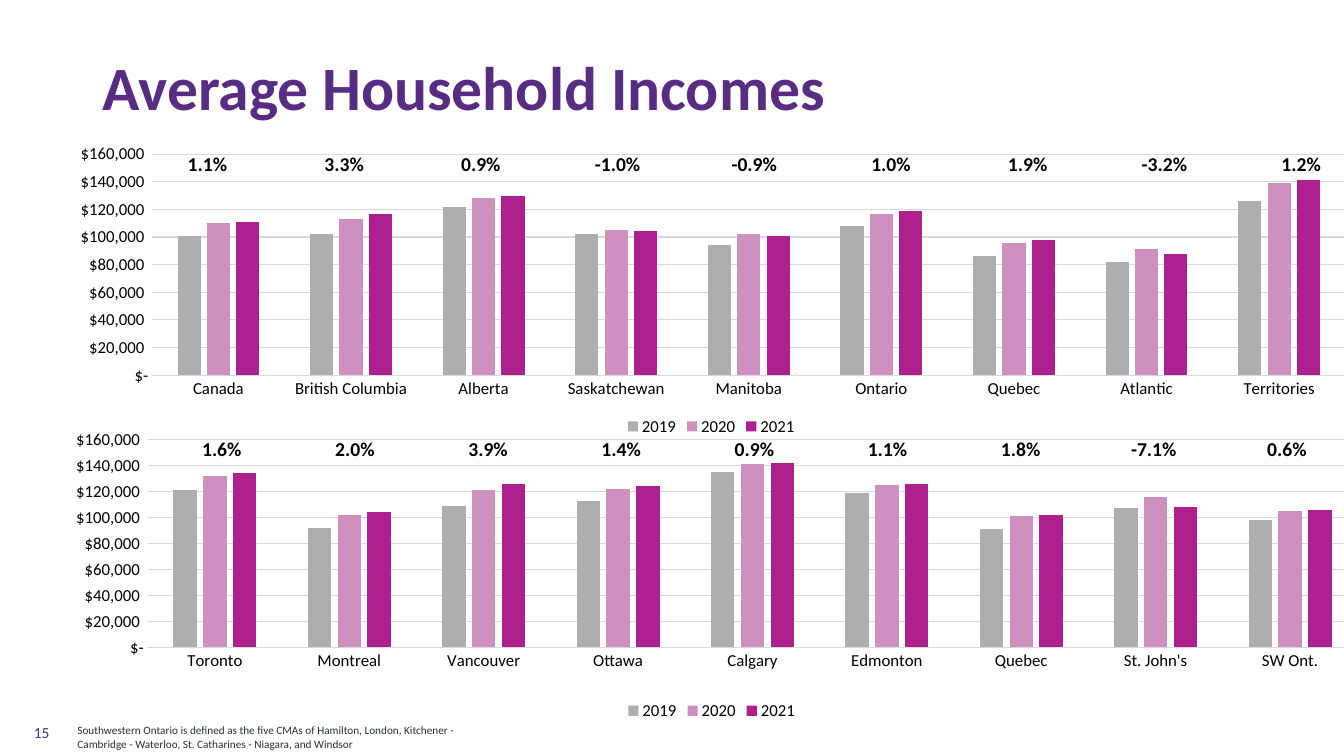
from dataclasses import dataclass

from lxml.etree import SubElement
from pptx import Presentation
from pptx.chart.data import CategoryChartData
from pptx.dml.color import RGBColor
from pptx.enum.chart import XL_CHART_TYPE as ChartType
from pptx.enum.chart import XL_LEGEND_POSITION as LegendPosition
from pptx.enum.chart import XL_TICK_MARK as TickMark
from pptx.enum.text import MSO_ANCHOR as Anchor
from pptx.enum.text import PP_ALIGN as Align
from pptx.oxml.ns import qn
from pptx.slide import Slide
from pptx.util import Pt

PURPLE = RGBColor(0x58, 0x2C, 0x83)
SLATE = RGBColor(0x28, 0x2F, 0x39)
BLACK = RGBColor(0x00, 0x00, 0x00)
GRID_GREY = RGBColor(0xD9, 0xD9, 0xD9)
YEAR_COLORS = {
    "2019": RGBColor(0xAC, 0xAE, 0xB0),
    "2020": RGBColor(0xCD, 0x90, 0xBF),
    "2021": RGBColor(0xAD, 0x20, 0x8E),
}
FONT = "Calibri"
DOLLAR_FORMAT = r'_-"$"* #,##0_-;\-"$"* #,##0_-;_-"$"* "-"'
PLAIN_TABLE_STYLE = "{2D5ABB26-0587-4C30-8999-92F81FD0307C}"


@dataclass(frozen=True)
class Box:
    left: float
    top: float
    width: float
    height: float

    def lengths(self) -> tuple[Pt, Pt, Pt, Pt]:
        return Pt(self.left), Pt(self.top), Pt(self.width), Pt(self.height)


@dataclass(frozen=True)
class Label:
    text: str
    box: Box
    size: float
    color: RGBColor
    bold: bool = False
    align: Align = Align.LEFT
    anchor: Anchor = Anchor.TOP
    line_spacing: float = 1.0


@dataclass(frozen=True)
class Place:
    name: str
    thousands: tuple[int, int, int]
    change: str


@dataclass(frozen=True)
class IncomePanel:
    chart_box: Box
    table_box: Box
    places: tuple[Place, ...]
    plot: Box | None = None


CITIES = IncomePanel(
    Box(36.72, 301.68, 943.2, 216),
    Box(110.88, 308.88, 856.08, 29.52),
    (
        Place("Toronto", (121, 132, 134), "1.6%"),
        Place("Montreal", (92, 102, 104), "2.0%"),
        Place("Vancouver", (109, 121, 126), "3.9%"),
        Place("Ottawa", (113, 122, 124), "1.4%"),
        Place("Calgary", (135, 141, 142), "0.9%"),
        Place("Edmonton", (119, 125, 126), "1.1%"),
        Place("Quebec", (91, 101, 102), "1.8%"),
        Place("St. John's", (107, 116, 108), "-7.1%"),
        Place("SW Ont.", (98, 105, 106), "0.6%"),
    ),
    Box(0.073, 0.057, 0.916, 0.687),
)
REGIONS = IncomePanel(
    Box(36, 98.64, 943.92, 216),
    Box(99.36, 105.84, 879.12, 29.52),
    (
        Place("Canada", (101, 110, 111), "1.1%"),
        Place("British Columbia", (102, 113, 117), "3.3%"),
        Place("Alberta", (122, 128, 130), "0.9%"),
        Place("Saskatchewan", (102, 105, 104), "-1.0%"),
        Place("Manitoba", (94, 102, 101), "-0.9%"),
        Place("Ontario", (108, 117, 119), "1.0%"),
        Place("Quebec", (86, 96, 98), "1.9%"),
        Place("Atlantic", (82, 91, 88), "-3.2%"),
        Place("Territories", (126, 139, 141), "1.2%"),
    ),
)
LABELS = (
    Label("Average Household Incomes", Box(66.24, 30.96, 863.28, 66.96), 44, PURPLE,
          bold=True, anchor=Anchor.MIDDLE, line_spacing=0.9),
    Label("Southwestern Ontario is defined as the five CMAs of Hamilton, London, Kitchener - "
          "Cambridge - Waterloo, St. Catharines - Niagara, and Windsor",
          Box(48.24, 513.36, 313.92, 26.64), 8, SLATE),
    Label("15", Box(0, 509.04, 42.48, 28.8), 11, PURPLE,
          align=Align.RIGHT, anchor=Anchor.MIDDLE),
)


def style_font(font, size: float, color: RGBColor, bold: bool = False) -> None:
    font.name = FONT
    font.size = Pt(size)
    font.bold = bold
    font.color.rgb = color


def place_plot(chart, plot: Box) -> None:
    plot_area = chart.element.find(f".//{qn('c:plotArea')}")
    for old_layout in plot_area.findall(qn("c:layout")):
        plot_area.remove(old_layout)
    layout = SubElement(plot_area, qn("c:layout"))
    plot_area.insert(0, layout)
    manual = SubElement(layout, qn("c:manualLayout"))
    settings = {
        "layoutTarget": "inner", "xMode": "edge", "yMode": "edge",
        "x": plot.left, "y": plot.top, "w": plot.width, "h": plot.height,
    }
    for tag, value in settings.items():
        SubElement(manual, qn(f"c:{tag}")).set("val", str(value))


def add_income_chart(slide: Slide, panel: IncomePanel) -> None:
    data = CategoryChartData(number_format=DOLLAR_FORMAT)
    data.categories = [place.name for place in panel.places]
    for index, year in enumerate(YEAR_COLORS):
        data.add_series(year, [place.thousands[index] * 1000 for place in panel.places])
    chart = slide.shapes.add_chart(
        ChartType.COLUMN_CLUSTERED, *panel.chart_box.lengths(), data).chart
    style_font(chart.font, 12, BLACK)
    chart.has_title = False
    chart.has_legend = True
    chart.legend.position = LegendPosition.BOTTOM
    chart.legend.include_in_layout = False
    style_font(chart.legend.font, 12, BLACK)

    columns = chart.plots[0]
    columns.gap_width = 219
    columns.overlap = -27
    columns.vary_by_categories = False
    for series in columns.series:
        series.format.fill.solid()
        series.format.fill.fore_color.rgb = YEAR_COLORS[series.name]

    value_axis = chart.value_axis
    value_axis.minimum_scale = 0
    value_axis.maximum_scale = 160000
    value_axis.major_unit = 20000
    value_axis.tick_labels.number_format = DOLLAR_FORMAT
    value_axis.tick_labels.number_format_is_linked = False
    for axis in (chart.category_axis, value_axis):
        axis.major_tick_mark = axis.minor_tick_mark = TickMark.NONE
        style_font(axis.tick_labels.font, 12, BLACK)
    value_axis.format.line.fill.background()
    for line in (chart.category_axis.format.line, value_axis.major_gridlines.format.line):
        line.color.rgb = GRID_GREY
        line.width = Pt(0.75)
    if panel.plot:
        place_plot(chart, panel.plot)


def add_change_table(slide: Slide, panel: IncomePanel) -> None:
    count = len(panel.places)
    frame = slide.shapes.add_table(1, count, *panel.table_box.lengths())
    frame.element.find(f".//{qn('a:tableStyleId')}").text = PLAIN_TABLE_STYLE
    table = frame.table
    table.first_row = table.horz_banding = False
    for column, place in enumerate(panel.places):
        table.columns[column].width = Pt(panel.table_box.width / count)
        cell = table.cell(0, column)
        cell.fill.background()
        cell.text_frame.text = place.change
        paragraph = cell.text_frame.paragraphs[0]
        paragraph.alignment = Align.CENTER
        style_font(paragraph.runs[0].font, 14, BLACK, True)


def add_label(slide: Slide, label: Label) -> None:
    text_frame = slide.shapes.add_textbox(*label.box.lengths()).text_frame
    text_frame.word_wrap = True
    text_frame.vertical_anchor = label.anchor
    text_frame.text = label.text
    paragraph = text_frame.paragraphs[0]
    paragraph.alignment = label.align
    paragraph.line_spacing = label.line_spacing
    style_font(paragraph.runs[0].font, label.size, label.color, label.bold)


def main() -> None:
    presentation = Presentation()
    presentation.slide_width, presentation.slide_height = Pt(960), Pt(540)
    slide = presentation.slides.add_slide(presentation.slide_layouts[6])
    for panel in (CITIES, REGIONS):
        add_income_chart(slide, panel)
    for label in LABELS:
        add_label(slide, label)
    for panel in (REGIONS, CITIES):
        add_change_table(slide, panel)
    presentation.save("out.pptx")


if __name__ == "__main__":
    main()
